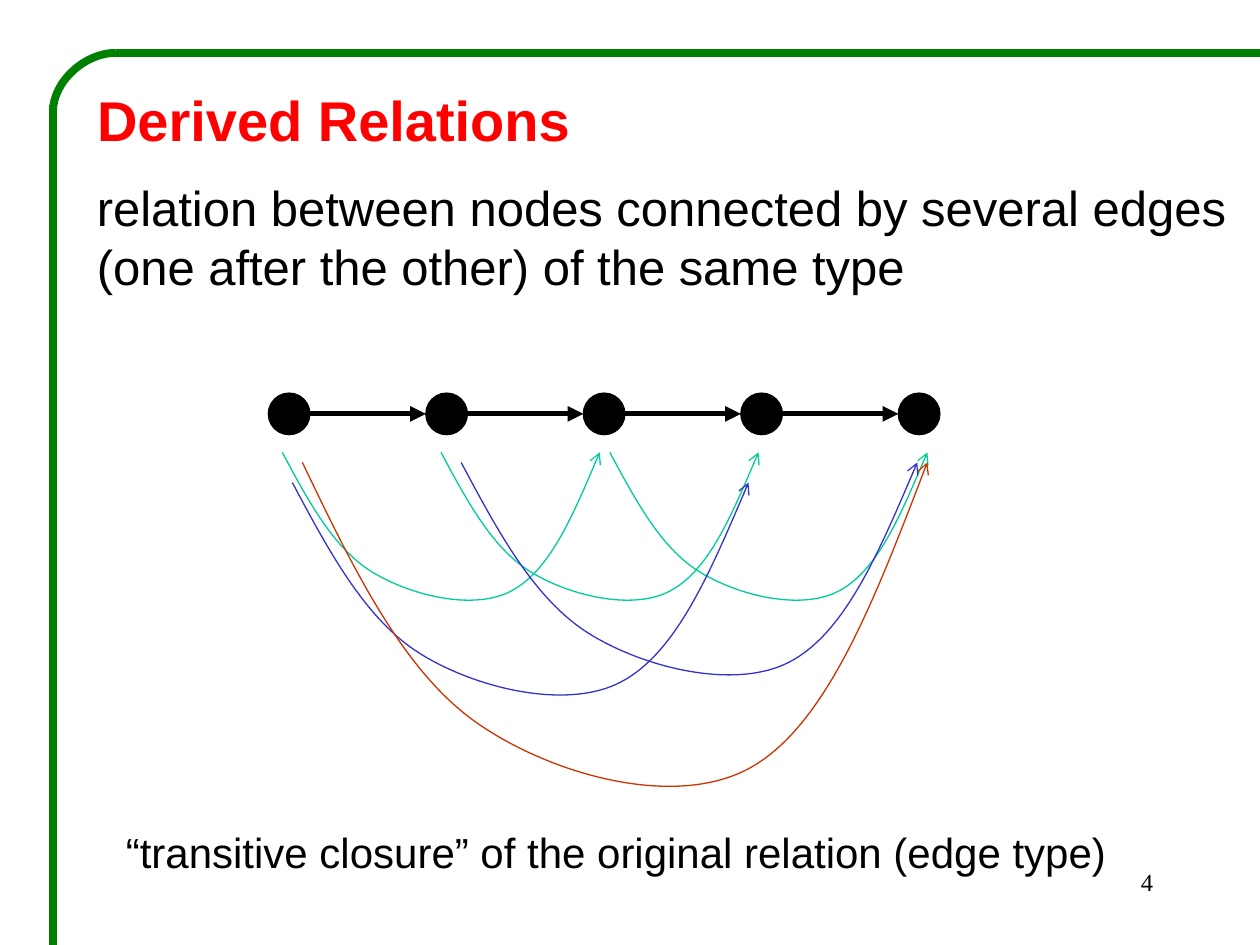
from dataclasses import dataclass

from lxml.etree import SubElement
from pptx import Presentation
from pptx.dml.color import RGBColor
from pptx.enum.shapes import MSO_CONNECTOR, MSO_SHAPE
from pptx.enum.text import MSO_ANCHOR, MSO_AUTO_SIZE, PP_ALIGN
from pptx.oxml.ns import qn
from pptx.util import Inches, Pt


@dataclass(frozen=True)
class Theme:
    sans: str = "Arial"
    serif: str = "Times New Roman"
    black: str = "000000"
    title_color: str = "FF0000"
    frame: str = "008000"
    two_steps: str = "00CC99"
    three_steps: str = "3333CC"
    four_steps: str = "CC3300"
    title_size: float = 32
    body_size: float = 28
    caption_size: float = 24
    number_size: float = 14
    frame_width: float = 4.5
    edge_width: float = 3
    thin_width: float = 0.75


# Start, then control, control, end for each segment, as fractions of the box.
ARC_SHAPE = [
    (0, 0),
    (0.08, 0.3), (0.16, 0.6), (0.28, 0.75),
    (0.4, 0.9), (0.6, 1), (0.72, 0.875),
    (0.84, 0.75), (0.92, 0.375), (1, 0),
]


class SlideBuilder:
    """Holds the theme and the current slide."""

    def __init__(self, slide, theme):
        self.slide = slide
        self.theme = theme

    def format_line(self, shape, color, width, arrowhead=None):
        shape.line.color.rgb = RGBColor.from_string(color)
        shape.line.width = Pt(width)
        if arrowhead:
            line = shape.line._get_or_add_ln()
            SubElement(line, qn("a:tailEnd"), type=arrowhead)

    def fill_text(self, shape, box, text, size, color=None, font=None,
                  bold=False, align=PP_ALIGN.LEFT):
        shape.left, shape.top, shape.width, shape.height = map(Inches, box)
        frame = shape.text_frame
        frame.text = text
        frame.word_wrap = True
        frame.auto_size = MSO_AUTO_SIZE.NONE
        frame.vertical_anchor = MSO_ANCHOR.TOP
        paragraph = frame.paragraphs[0]
        paragraph.alignment = align
        for run in paragraph.runs:
            run.font.name = font or self.theme.sans
            run.font.size = Pt(size)
            run.font.bold = bold
            run.font.color.rgb = RGBColor.from_string(color or self.theme.black)

    def title(self, box, text):
        self.fill_text(self.slide.shapes.title, box, text, self.theme.title_size,
                       self.theme.title_color, bold=True)

    def text(self, box, text, size, **style):
        shape = self.slide.shapes.add_textbox(*map(Inches, box))
        self.fill_text(shape, box, text, size, **style)

    def line(self, start, end, color, width, arrowhead=None):
        connector = self.slide.shapes.add_connector(
            MSO_CONNECTOR.STRAIGHT, *map(Inches, start + end))
        self.format_line(connector, color, width, arrowhead)
        SubElement(connector._element.spPr, qn("a:effectLst"))

    def node(self, left, top, diameter):
        shape = self.slide.shapes.add_shape(
            MSO_SHAPE.OVAL, *map(Inches, (left, top, diameter, diameter)))
        shape.shadow.inherit = False
        shape.fill.solid()
        shape.fill.fore_color.rgb = RGBColor.from_string(self.theme.black)
        self.format_line(shape, self.theme.black, self.theme.thin_width)

    def curve(self, points, color, width, arrowhead=None):
        """Draw Bézier segments: a start, then two controls and an end for each."""
        start, *rest = [(Inches(x), Inches(y)) for x, y in points]
        builder = self.slide.shapes.build_freeform(*start)
        builder.add_line_segments(rest, close=False)
        shape = builder.convert_to_shape()
        outline = shape._element.spPr.find(".//" + qn("a:path"))
        segments = outline.findall(qn("a:lnTo"))
        for first in range(0, len(segments), 3):
            bezier = SubElement(outline, qn("a:cubicBezTo"))
            for segment in segments[first:first + 3]:
                bezier.append(segment[0])
                outline.remove(segment)
        shape.shadow.inherit = False
        shape.fill.background()
        self.format_line(shape, color, width, arrowhead)

    def relation_arc(self, left, top, width, height, color):
        points = [(left + x * width, top + y * height) for x, y in ARC_SHAPE]
        self.curve(points, color, self.theme.thin_width, "arrow")


def main():
    presentation = Presentation()
    presentation.slide_width, presentation.slide_height = Inches(10), Inches(7.5)
    slide = presentation.slides.add_slide(presentation.slide_layouts[5])
    theme = Theme()
    builder = SlideBuilder(slide, theme)

    edge = 0.42
    builder.line((10, edge), (0.92, edge), theme.frame, theme.frame_width)
    builder.line((edge, 0.83), (edge, 7.5), theme.frame, theme.frame_width)
    builder.curve([(edge, 0.89), (edge, 0.65), (0.67, edge), (0.92, edge)],
                  theme.frame, theme.frame_width)

    builder.title((0.67, 0.63, 9.33, 0.65), "Derived Relations")
    builder.text((0.67, 1.36, 9.33, 1.06),
                 "relation between nodes connected by several edges "
                 "(one after the other) of the same type", theme.body_size)

    node_top, diameter, pitch = 3.12, 0.33, 1.25
    node_lefts = [2.13 + pitch * index for index in range(5)]
    for left in node_lefts:
        builder.node(left, node_top, diameter)
    center = node_top + diameter / 2
    for left, next_left in zip(node_lefts, node_lefts[1:]):
        builder.line((left + diameter, center), (next_left, center),
                     theme.black, theme.edge_width, "triangle")

    for left in (2.24, 3.5, 4.84):
        builder.relation_arc(left, 3.59, 2.52, 1.26, theme.two_steps)
    for left, top in ((2.32, 3.83), (3.66, 3.67)):
        builder.relation_arc(left, top, 3.62, 1.81, theme.three_steps)
    builder.relation_arc(2.4, 3.67, 4.96, 2.76, theme.four_steps)

    builder.text((0.9, 6.51, 8.11, 0.5),
                 "“transitive closure” of the original relation (edge type)",
                 theme.caption_size)
    builder.text((7.17, 6.83, 2.08, 0.5), "4", theme.number_size,
                 font=theme.serif, align=PP_ALIGN.RIGHT)
    presentation.save("out.pptx")


if __name__ == "__main__":
    main()
